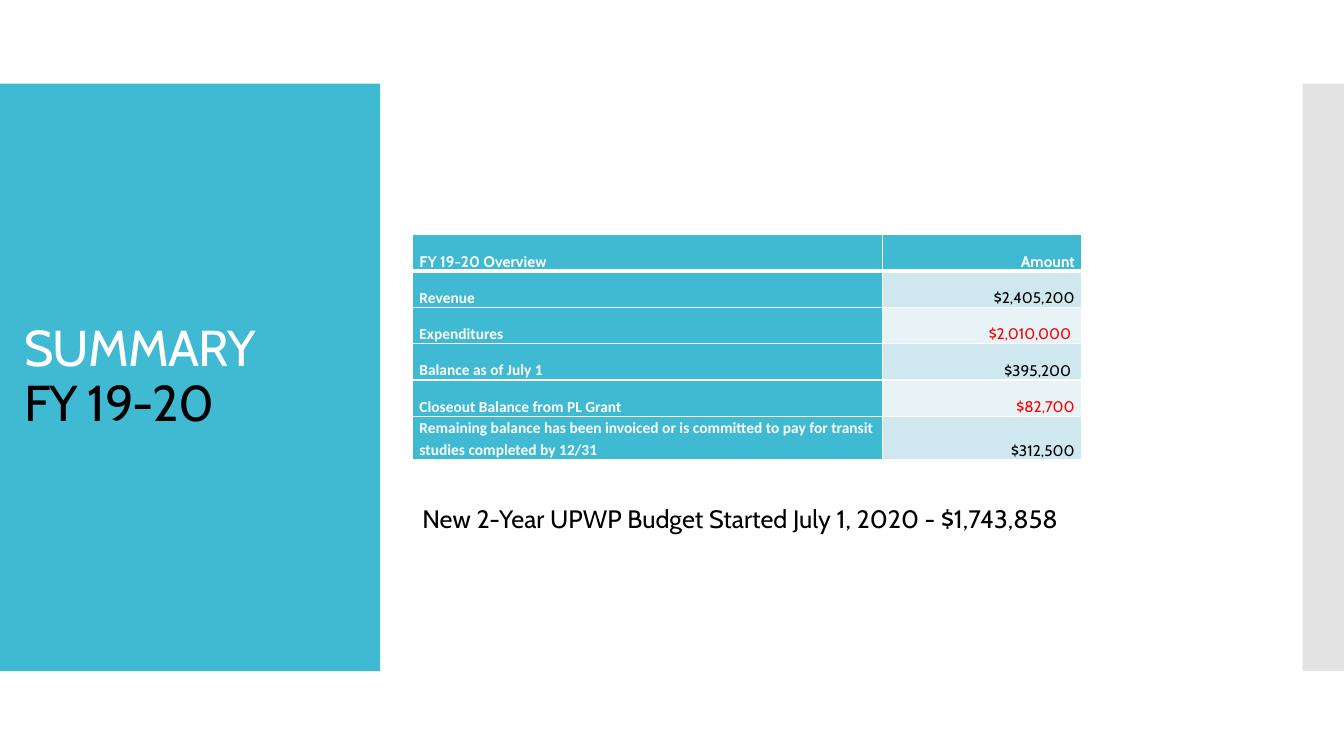
from lxml import etree
from pptx import Presentation
from pptx.dml.color import RGBColor
from pptx.enum import shapes, text
from pptx.oxml import ns
from pptx.util import Inches, Pt

TEAL = RGBColor(0x40, 0xBA, 0xD2)
GRAY = RGBColor(0xC8, 0xC8, 0xC8)
PALE = RGBColor(0xE8, 0xF3, 0xF7)
MIST = RGBColor(0xCF, 0xE7, 0xEE)
WHITE = RGBColor(0xFF, 0xFF, 0xFF)
BLACK = RGBColor(0, 0, 0)
RED = RGBColor(0xFF, 0, 0)

HEAD = ("FY 19-20 Overview", "Amount")
ROWS = [
    ("Revenue", "$2,405,200", BLACK),
    ("Expenditures", "$2,010,000 ", RED),
    ("Balance as of July 1", "$395,200 ", BLACK),
    ("Closeout Balance from PL Grant", "$82,700", RED),
    ("Remaining balance has been invoiced or is committed to pay for "
     "transit studies completed by 12/31", "$312,500", BLACK),
]


class Deck:
    font = "Cabin"

    def __init__(self):
        self.prs = Presentation()
        self.prs.slide_width = Inches(13.33)
        self.prs.slide_height = Inches(7.5)
        self.slide = self.prs.slides.add_slide(self.prs.slide_layouts[5])

    def style(self, font, size, color, bold=False, name=None):
        font.name = name or self.font
        font.size = Pt(size)
        font.bold = bold
        font.color.rgb = color

    def panel(self, x, y, w, h, color, alpha=None):
        box = self.slide.shapes.add_shape(
            shapes.MSO_SHAPE.RECTANGLE, *map(Inches, (x, y, w, h)))
        box.shadow.inherit = False
        box.fill.solid()
        box.fill.fore_color.rgb = color
        box.line.fill.background()
        if alpha:
            tone = box.element.spPr.find(".//" + ns.qn("a:srgbClr"))
            etree.SubElement(tone, ns.qn("a:alpha"), val=str(alpha * 1000))

    def title(self, x, y, w, h, lines):
        """Fill the title with (words, color) lines and lift it to the front."""
        title = self.slide.shapes.title
        title.left, title.top, title.width, title.height = map(
            Inches, (x, y, w, h))
        title.element.getparent().append(title.element)
        frame = title.text_frame
        frame.word_wrap = True
        frame.auto_size = text.MSO_AUTO_SIZE.NONE
        frame.vertical_anchor = text.MSO_ANCHOR.MIDDLE
        para = frame.paragraphs[0]
        para.alignment = text.PP_ALIGN.LEFT
        para.line_spacing = 0.9
        for i, (words, color) in enumerate(lines):
            if i:
                para.add_line_break()
            run = para.add_run()
            run.text = words
            self.style(run.font, 36, color)
            run.font._element.set("spc", "-60")

    def note(self, x, y, w, h, words):
        frame = self.slide.shapes.add_textbox(
            *map(Inches, (x, y, w, h))).text_frame
        frame.word_wrap = True
        para = frame.paragraphs[0]
        para.text = words
        self.style(para.font, 18, BLACK)

    def edge(self, cell, base):
        """Draw white borders, with the bottom one base points wide."""
        props = cell._tc.get_or_add_tcPr()
        for side, width in zip("LRTB", (1, 1, 1, base)):
            line = etree.SubElement(
                props, ns.qn("a:ln" + side), w=str(Pt(width)))
            fill = etree.SubElement(line, ns.qn("a:solidFill"))
            etree.SubElement(fill, ns.qn("a:srgbClr"), val=str(WHITE))

    def cell(self, cell, words, fill, color, bold, name, right):
        cell.margin_left = cell.margin_right = Inches(0.07)
        cell.margin_top = cell.margin_bottom = 0
        cell.vertical_anchor = text.MSO_ANCHOR.BOTTOM
        cell.fill.solid()
        cell.fill.fore_color.rgb = fill
        para = cell.text_frame.paragraphs[0]
        para.text = words
        para.line_spacing = 1.15
        para.alignment = text.PP_ALIGN.RIGHT if right else text.PP_ALIGN.LEFT
        self.style(para.font, 11, color, bold, name)

    def table(self, x, y, cols, high, head, rows):
        count = len(rows) + 1
        grid = self.slide.shapes.add_table(
            count, len(cols), Inches(x), Inches(y),
            Inches(sum(cols)), Inches(high * count)).table
        for col, wide in zip(grid.columns, cols):
            col.width = Inches(wide)
        for r in range(count):
            for c in range(len(cols)):
                self.edge(grid.cell(r, c), 1 if r else 3)
        for c, words in enumerate(head):
            self.cell(grid.cell(0, c), words, TEAL, WHITE, True, None, c == 1)
        for r, (label, sum_, color) in enumerate(rows, 1):
            self.cell(grid.cell(r, 0), label, TEAL, WHITE, True, "Calibri",
                      False)
            self.cell(grid.cell(r, 1), sum_, MIST if r % 2 else PALE, color,
                      False, None, True)


def main():
    deck = Deck()
    deck.panel(0, 0.83, 3.77, 5.83, TEAL)
    deck.panel(12.92, 0.83, 0.41, 5.83, GRAY, alpha=50)
    deck.title(0.14, 1.23, 3.56, 5.03,
               [("SUMMARY", WHITE), ("FY 19-20", BLACK)])
    deck.table(4.09, 2.33, (4.66, 1.98), 0.36, HEAD, ROWS)
    deck.note(4.09, 4.94, 8.48, 0.4,
              "New 2-Year UPWP Budget Started July 1, 2020 - $1,743,858")
    deck.prs.save("out.pptx")


if __name__ == "__main__":
    main()
